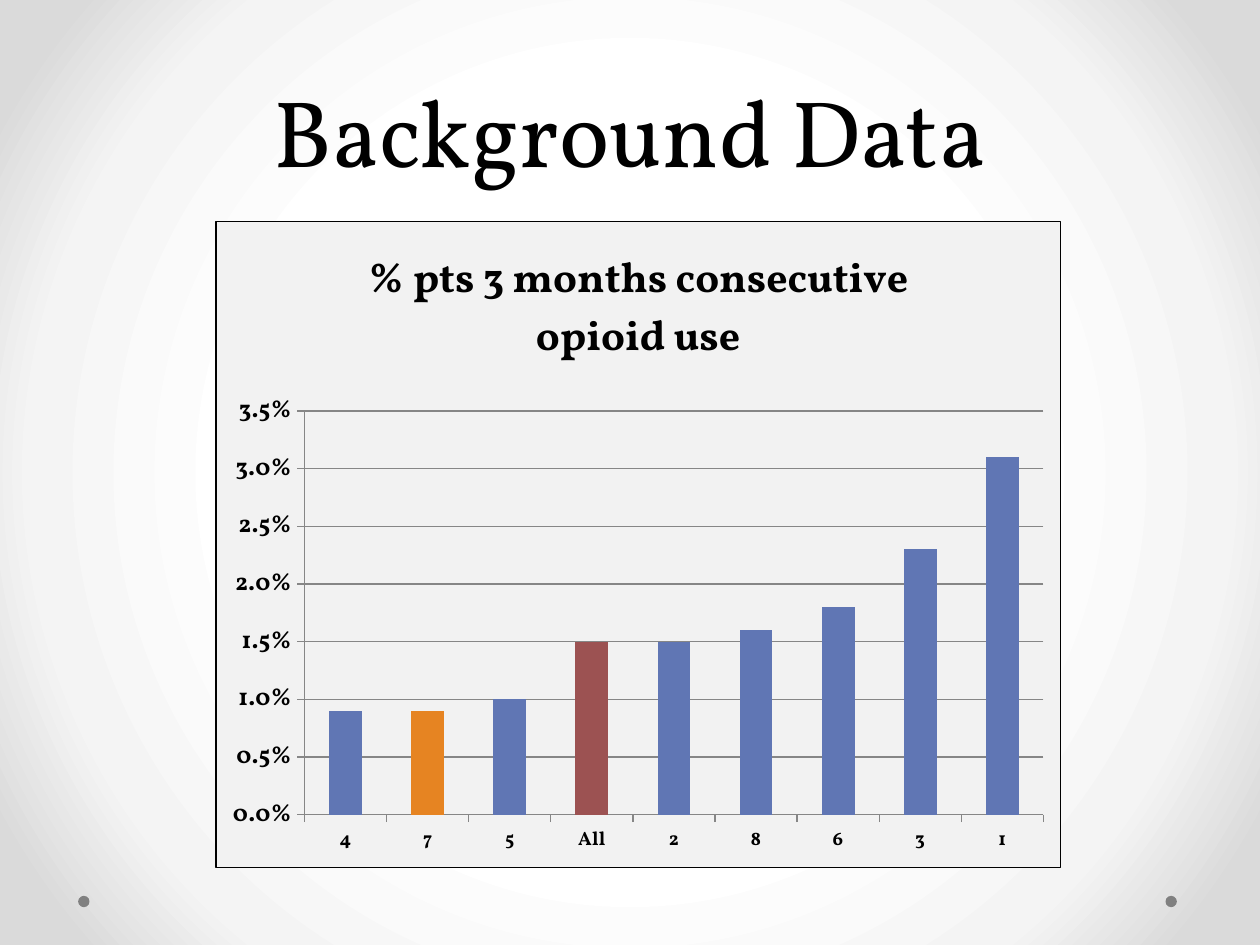
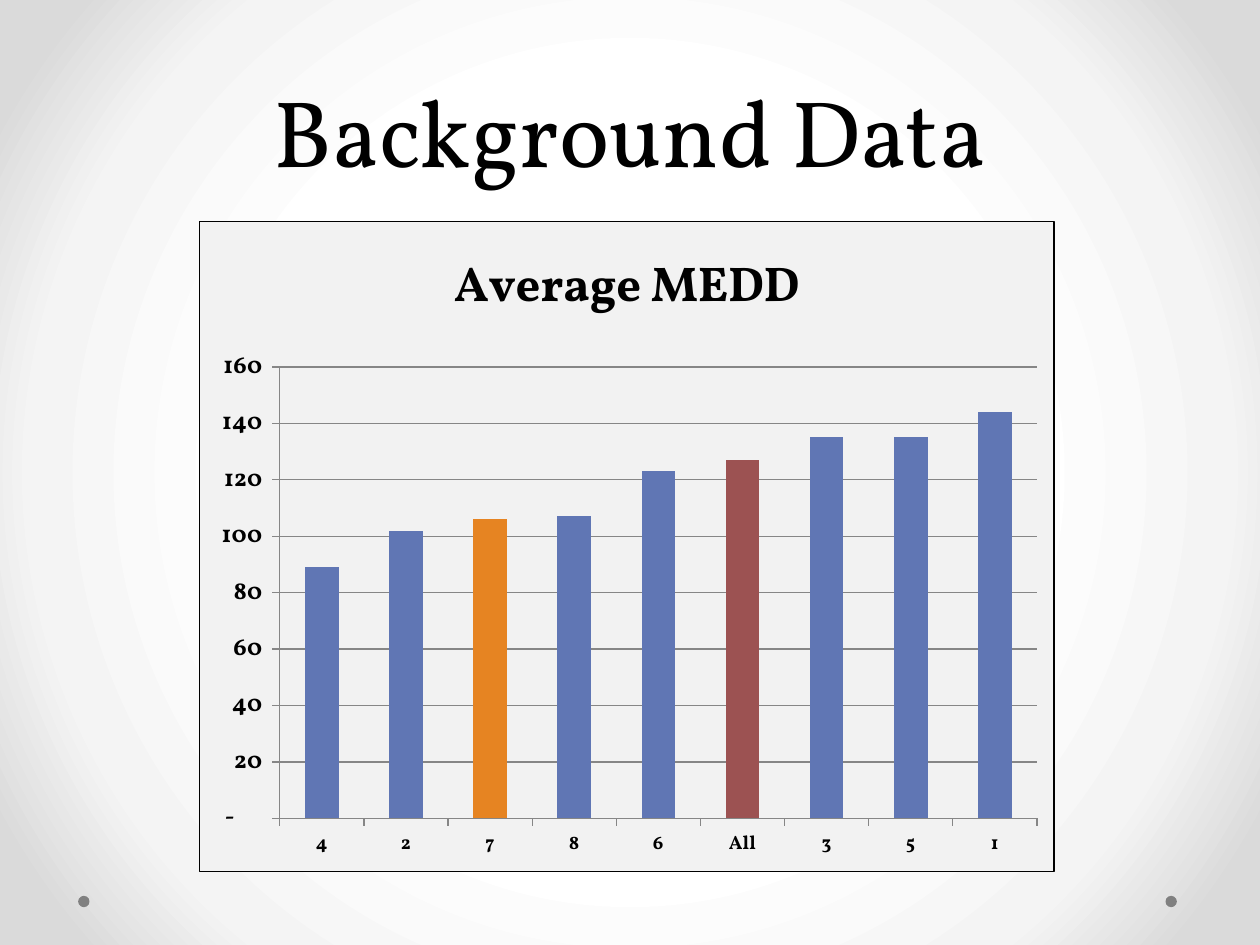
from copy import deepcopy
from dataclasses import dataclass

from pptx import Presentation
from pptx.chart.data import CategoryChartData
from pptx.dml.color import RGBColor
from pptx.enum.chart import XL_CHART_TYPE, XL_TICK_MARK
from pptx.enum.shapes import MSO_SHAPE
from pptx.enum.text import MSO_ANCHOR, PP_ALIGN
from pptx.oxml import parse_xml
from pptx.oxml.ns import nsdecls
from pptx.util import Inches, Pt


@dataclass(frozen=True)
class Theme:
    font: str = "Vollkorn"
    text: str = "000000"
    dot: str = "808080"
    grid: str = "868686"
    panel: str = "F2F2F2"
    bar: str = "6076B4"
    highlight: str = "E68422"
    overall: str = "9C5252"
    backdrop: tuple = ((50, "FFFFFF"), (76, "F4F4F4"), (92, "DADADA"))
    title_size: int = 54
    title_leading: int = 58
    value_size: int = 14
    category_size: int = 11


theme = Theme()
rgb = RGBColor.from_string


def set_font(font, **values):
    values = {"name": theme.font, **values}
    for name, value in values.items():
        setattr(font, name, value)
    font.color.rgb = rgb(theme.text)


charts = [
    {
        "title": "% pts 3 months consecutive opioid use",
        "title_size": 24,
        "box": (1.71, 1.75, 6.71, 5.14),
        "values": {"4": 0.009, "7": 0.009, "5": 0.01, "All": 0.015, "2": 0.015,
                   "8": 0.016, "6": 0.018, "3": 0.023, "1": 0.031},
        "top": 0.035,
        "step": 0.005,
        "format": "0.0%",
    },
    {
        "title": "Average MEDD",
        "title_size": 28,
        "box": (1.58, 1.75, 6.79, 5.17),
        "values": {"4": 89, "2": 102, "7": 106, "8": 107, "6": 123,
                   "All": 127, "3": 135, "5": 135, "1": 144},
        "top": 160,
        "step": 20,
        "format": '_(* #,##0_);_(* \\(#,##0\\);_(* "-"??_);_(',
    },
]
special_bars = {"7": theme.highlight, "All": theme.overall}

prs = Presentation()
prs.slide_width, prs.slide_height = Inches(10), Inches(7.5)
layout = prs.slide_layouts[5]
master = prs.slide_master

# Shared radial background
master.background.fill.solid()
solid = master.element.xpath("p:cSld/p:bg/p:bgPr/a:solidFill")[0]
stops = "".join(
    f'<a:gs pos="{pos * 1000}"><a:srgbClr val="{color}"/></a:gs>'
    for pos, color in theme.backdrop
)
solid.getparent().replace(solid, parse_xml(
    f'<a:gradFill {nsdecls("a")} rotWithShape="1"><a:gsLst>{stops}</a:gsLst>'
    '<a:path path="circle"><a:fillToRect l="50000" t="50000" r="50000" b="50000"/>'
    "</a:path></a:gradFill>"
))

for number, spec_chart in enumerate(charts):
    s = prs.slides.add_slide(layout)

    # The corner dots are drawn once and moved to the master
    if number == 0:
        for left in (9.25, 0.62):
            dot = s.shapes.add_shape(MSO_SHAPE.OVAL, Inches(left), Inches(7.11),
                                     Inches(0.09), Inches(0.09))
            dot.shadow.inherit = False
            dot.fill.solid()
            dot.fill.fore_color.rgb = rgb(theme.dot)
            dot.line.fill.background()
            master.shapes.element.append(dot.element)

    title = s.shapes.title
    title.left, title.top, title.width, title.height = map(Inches, (0.5, 0, 9, 1.53))
    tf = title.text_frame
    tf.text = "Background Data"
    tf.vertical_anchor = MSO_ANCHOR.BOTTOM
    p = tf.paragraphs[0]
    p.alignment = PP_ALIGN.CENTER
    p.line_spacing = Pt(theme.title_leading)
    set_font(p.runs[0].font, size=Pt(theme.title_size))

    values = spec_chart["values"]
    data = CategoryChartData(number_format=spec_chart["format"])
    data.categories = list(values)
    data.add_series(spec_chart["title"], list(values.values()))
    chart = s.shapes.add_chart(XL_CHART_TYPE.COLUMN_CLUSTERED,
                               *map(Inches, spec_chart["box"]), data).chart
    set_font(chart.font, size=Pt(10))
    chart.has_legend = False
    chart.has_title = True
    chart.chart_title.include_in_layout = False
    tf = chart.chart_title.text_frame
    tf.text = spec_chart["title"]
    set_font(tf.paragraphs[0].runs[0].font, size=Pt(spec_chart["title_size"]), bold=True)

    value_axis, category_axis = chart.value_axis, chart.category_axis
    for axis, size in ((value_axis, theme.value_size),
                       (category_axis, theme.category_size)):
        axis.major_tick_mark = XL_TICK_MARK.OUTSIDE
        axis.minor_tick_mark = XL_TICK_MARK.NONE
        set_font(axis.tick_labels.font, size=Pt(size), bold=True)
        axis.format.line.color.rgb = rgb(theme.grid)
        axis.format.line.width = Pt(0.75)
    value_axis.minimum_scale = 0
    value_axis.maximum_scale = spec_chart["top"]
    value_axis.major_unit = spec_chart["step"]
    value_axis.tick_labels.number_format = spec_chart["format"]
    value_axis.tick_labels.number_format_is_linked = False
    value_axis.has_major_gridlines = True
    value_axis.major_gridlines.format.line.color.rgb = rgb(theme.grid)
    value_axis.major_gridlines.format.line.width = Pt(0.75)

    plot = chart.plots[0]
    plot.gap_width = 150
    plot.vary_by_categories = False
    series = plot.series[0]
    series.format.fill.solid()
    series.format.fill.fore_color.rgb = rgb(theme.bar)
    for i, category in enumerate(values):
        if category in special_bars:
            fill = series.points[i].format.fill
            fill.solid()
            fill.fore_color.rgb = rgb(special_bars[category])

    # Panel behind the plot, and the same fill with a border for the whole chart
    panel = parse_xml(
        f'<c:spPr {nsdecls("c", "a")}><a:solidFill><a:srgbClr val="{theme.panel}"/>'
        "</a:solidFill></c:spPr>"
    )
    frame = deepcopy(panel)
    frame.append(parse_xml(
        f'<a:ln {nsdecls("a")} w="{Pt(0.75)}"><a:solidFill>'
        f'<a:srgbClr val="{theme.text}"/></a:solidFill></a:ln>'
    ))
    chart.element.xpath("c:chart/c:plotArea")[0].append(panel)
    chart.element.xpath("c:chart")[0].addnext(frame)

prs.save("out.pptx")
